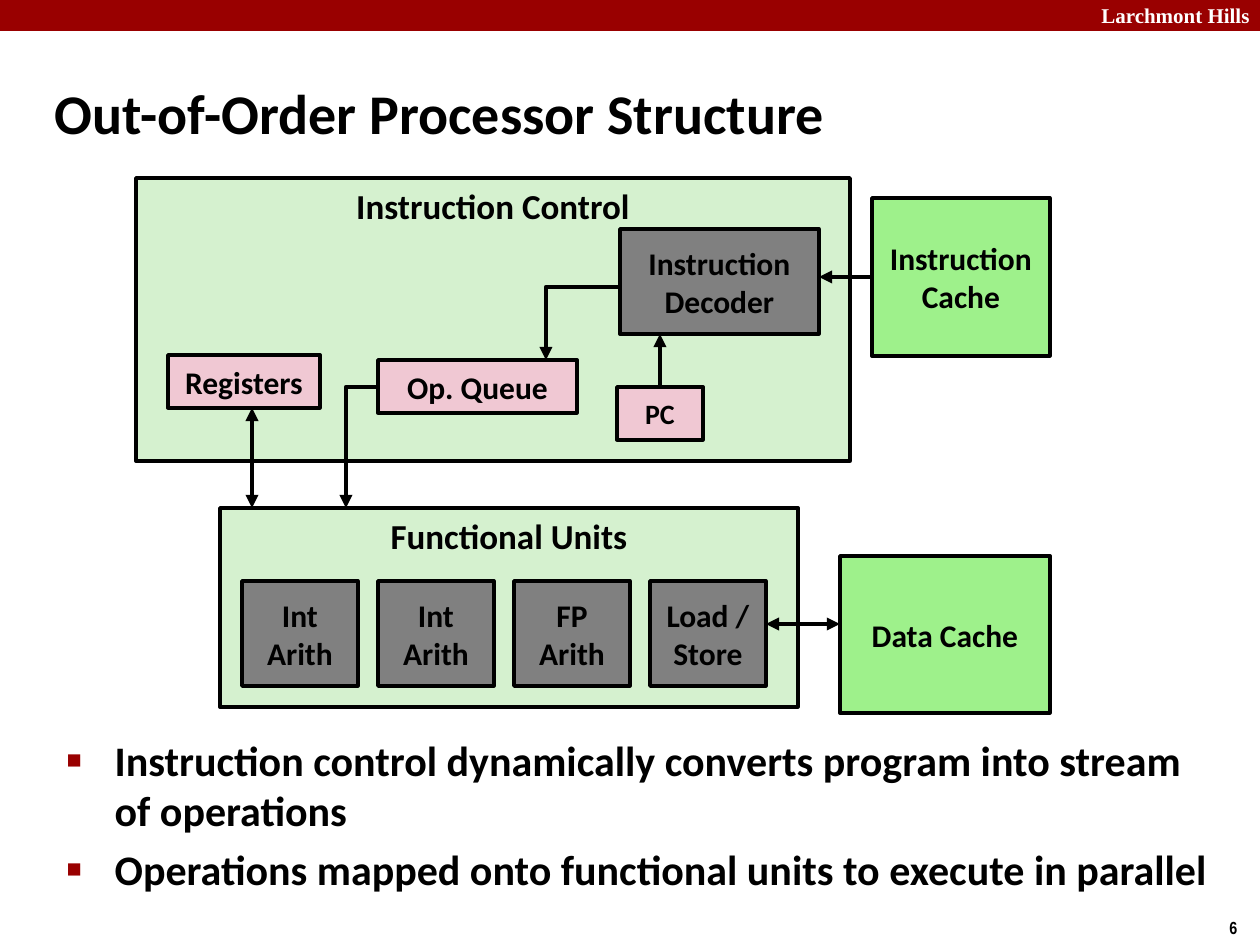
"""Build the slide on the structure of an out-of-order processor."""
import lxml.etree
import pptx
import pptx.dml.color
import pptx.enum.shapes
import pptx.enum.text
import pptx.oxml.ns
import pptx.util

SCALE = 914400 / 126
ALIGN = pptx.enum.text.PP_ALIGN
ANCHOR = pptx.enum.text.MSO_ANCHOR
CONNECTOR = pptx.enum.shapes.MSO_CONNECTOR
BLACK, WHITE, RED = "000000", "FFFFFF", "990000"
PANEL, CACHE, UNIT, STORAGE = "D5F1CF", "9EF18B", "808080", "F0C8D3"


def px(length):
    return pptx.util.Emu(round(length * SCALE))


def color(value):
    return pptx.dml.color.RGBColor.from_string(value)


def add_xml(parent, tag, **attributes):
    return lxml.etree.SubElement(parent, pptx.oxml.ns.qn(tag), attributes)


class SlideBuilder:
    font = "Calibri"
    outline_width = 2
    arrow_width = 2.5

    def __init__(self, slide):
        self.slide = slide

    def set_text(self, shape, text, size, align=ALIGN.LEFT, anchor=ANCHOR.TOP, font=None, ink=BLACK):
        frame = shape.text_frame
        frame.text = text
        frame.word_wrap = True
        frame.auto_size = pptx.enum.text.MSO_AUTO_SIZE.NONE
        frame.vertical_anchor = anchor
        for paragraph in frame.paragraphs:
            paragraph.alignment = align
            for run in paragraph.runs:
                run.font.name = font or self.font
                run.font.size = pptx.util.Pt(size)
                run.font.bold = True
                run.font.color.rgb = color(ink)

    def placeholder(self, index, area, text, size, anchor=ANCHOR.TOP):
        shape = self.slide.placeholders[index]
        shape.left, shape.top, shape.width, shape.height = map(px, area)
        self.set_text(shape, text, size, anchor=anchor)
        return shape

    def title(self, area, text):
        self.placeholder(0, area, text, 32, ANCHOR.MIDDLE)

    def bullets(self, area, items):
        body = self.placeholder(1, area, "\n".join(items), 24)
        for paragraph in body.text_frame.paragraphs:
            properties = paragraph._p.get_or_add_pPr()
            properties.set("marL", str(px(48)))
            properties.set("indent", str(-px(48)))
            add_xml(add_xml(properties, "a:buClr"), "a:srgbClr", val=RED)
            add_xml(properties, "a:buSzPct", val="60000")
            add_xml(properties, "a:buFont", typeface="Arial")
            add_xml(properties, "a:buChar", char="■")

    def label(self, area, text, size, font, ink):
        shape = self.slide.shapes.add_textbox(*map(px, area))
        self.set_text(shape, text, size, font=font, ink=ink)

    def rectangle(self, area, fill):
        kind = pptx.enum.shapes.MSO_SHAPE.RECTANGLE
        shape = self.slide.shapes.add_shape(kind, *map(px, area))
        shape.shadow.inherit = False
        shape.fill.solid()
        shape.fill.fore_color.rgb = color(fill)
        shape.line.fill.background()
        return shape

    def box(self, area, text, fill, size=18, anchor=ANCHOR.MIDDLE):
        shape = self.rectangle(area, fill)
        shape.line.color.rgb = color(BLACK)
        shape.line.width = pptx.util.Pt(self.outline_width)
        self.set_text(shape, text, size, ALIGN.CENTER, anchor)
        return shape

    def panel(self, area, text):
        return self.box(area, text, PANEL, 20, ANCHOR.TOP)

    def arrow(self, start, end, kind=CONNECTOR.STRAIGHT, both=False):
        connector = self.slide.shapes.add_connector(kind, *map(px, start + end))
        connector.line.color.rgb = color(BLACK)
        connector.line.width = pptx.util.Pt(self.arrow_width)
        line = connector.line._get_or_add_ln()
        if both:
            add_xml(line, "a:headEnd", type="triangle")
        add_xml(line, "a:tailEnd", type="triangle")
        add_xml(connector._element.spPr, "a:effectLst")
        return connector

    def corner_arrow(self, start, end):
        connector = self.arrow(start, end, CONNECTOR.ELBOW)
        connector._element.spPr.prstGeom.set("prst", "bentConnector2")


def main():
    presentation = pptx.Presentation()
    presentation.slide_width, presentation.slide_height = px(1260), px(945)
    slide = presentation.slides.add_slide(presentation.slide_layouts[1])
    builder = SlideBuilder(slide)

    builder.rectangle((0, 0, 1260, 31), RED)
    builder.label((1089, -4, 180, 38), "Larchmont Hills", 12, "Times New Roman", WHITE)
    builder.label((1217, 911, 43, 34), "6", 10, "Arial Narrow", BLACK)
    builder.title((42, 60, 1218, 105), "Out-of-Order Processor Structure")
    builder.bullets((54, 728, 1174, 169), [
        "Instruction control dynamically converts program into stream of operations",
        "Operations mapped onto functional units to execute in parallel",
    ])

    builder.panel((220, 508, 578, 199), "Functional Units")
    for index, name in enumerate(["Int\nArith", "Int\nArith", "FP\nArith", "Load /\nStore"]):
        builder.box((242 + 136 * index, 581, 116, 105), name, UNIT)

    builder.panel((136, 178, 714, 283), "Instruction Control")
    builder.box((168, 355, 152, 53), "Registers", STORAGE)
    builder.box((620, 229, 199, 105), "Instruction Decoder", UNIT)
    builder.box((378, 360, 199, 53), "Op. Queue", STORAGE)
    counter = builder.box((617, 387, 86, 53), "PC", STORAGE, 16)
    instruction_cache = builder.box((872, 198, 178, 158), "Instruction\nCache", CACHE)
    builder.box((840, 556, 210, 157), "Data Cache", CACHE)

    builder.arrow((872, 277), (819, 277)).begin_connect(instruction_cache, 1)
    builder.arrow((660, 387), (660, 334)).begin_connect(counter, 0)
    builder.arrow((252, 408), (252, 508), both=True)
    builder.arrow((766, 624), (840, 624), both=True)
    builder.corner_arrow((620, 287), (546, 360))
    builder.corner_arrow((378, 387), (346, 508))

    presentation.save("out.pptx")


if __name__ == "__main__":
    main()
